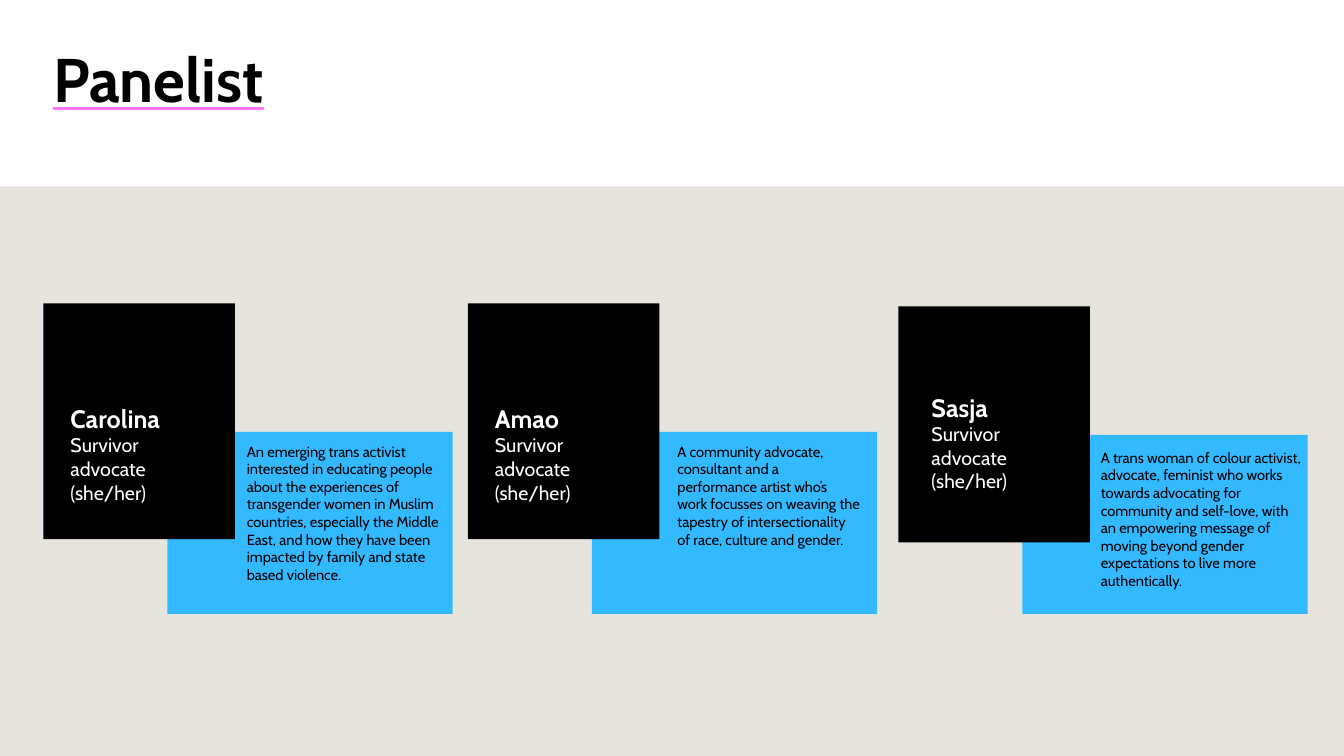
from dataclasses import dataclass

from lxml import etree
from pptx import Presentation
from pptx.dml.color import RGBColor
from pptx.enum.shapes import MSO_SHAPE
from pptx.enum.text import MSO_ANCHOR, PP_ALIGN
from pptx.oxml.ns import qn
from pptx.util import Inches, Pt

RECT = MSO_SHAPE.RECTANGLE
TOP = MSO_ANCHOR.TOP
LEFT = PP_ALIGN.LEFT


@dataclass(frozen=True)
class Theme:
    font: str = "Cabin"
    black: str = "000000"
    white: str = "FFFFFF"
    sand: str = "E6E4DC"
    blue: str = "33B9FF"
    pink: str = "FF75FF"
    title: float = 44
    name: float = 18
    role: float = 14
    bio: float = 10.5


def add_text(p, text, *, font, size, color, bold=False, underline=None):
    r = p.add_run()
    r.text = text
    r.font.name = font
    r.font.size = Pt(size)
    r.font.bold = bold
    r.font.color.rgb = RGBColor.from_string(color)
    if underline:
        r.font.underline = True
        line_fill = etree.Element(qn("a:uFill"))
        solid = etree.SubElement(line_fill, qn("a:solidFill"))
        etree.SubElement(solid, qn("a:srgbClr"), val=underline)
        r.font._element.find(qn("a:latin")).addprevious(line_fill)
    return r


class Deck:
    COLS, ROWS = 133.3, 75

    def __init__(self, theme):
        self.theme = theme
        self.prs = Presentation()
        self.prs.slide_width, self.prs.slide_height = Inches(13.33), Inches(7.5)
        self.s = self.prs.slides.add_slide(self.prs.slide_layouts[6])

    def place(self, col, row, cols, rows):
        cw = self.prs.slide_width / self.COLS
        rh = self.prs.slide_height / self.ROWS
        return round(col * cw), round(row * rh), round(cols * cw), round(rows * rh)

    def block(self, col, row, cols, rows, color):
        sp = self.s.shapes.add_shape(RECT, *self.place(col, row, cols, rows))
        sp.shadow.inherit = False
        sp.fill.solid()
        sp.fill.fore_color.rgb = RGBColor.from_string(color)
        sp.line.fill.background()
        return sp

    def text(self, col, row, cols, rows, lines, after=0, spacing=None):
        sp = self.s.shapes.add_textbox(*self.place(col, row, cols, rows))
        tf = sp.text_frame
        tf.word_wrap = True
        tf.vertical_anchor = TOP
        for i, (text, style) in enumerate(lines):
            p = tf.add_paragraph() if i else tf.paragraphs[0]
            p.alignment = LEFT
            p.space_after = Pt(after)
            p.line_spacing = spacing
            add_text(p, text, font=self.theme.font, **style)
        return sp

    def panelist(self, name, bio, card_at, name_at, bio_at, bio_size, after=6):
        t = self.theme
        col, row = card_at
        blue_top = row + 12.75
        self.block(col + 12.3, blue_top, 28.3, 60.9 - blue_top, t.blue)
        self.text(*bio_at, *bio_size, [(bio, dict(size=t.bio, color=t.black))], after)
        self.block(col, row, 19, 23.4, t.black)
        self.text(*name_at, 15.9, 11.1, [
            (name, dict(size=t.name, color=t.white, bold=True)),
            ("Survivor advocate (she/her)", dict(size=t.role, color=t.white)),
        ])


def main():
    theme = Theme()
    deck = Deck(theme)
    deck.block(0, 18.5, deck.COLS, 56.5, theme.sand)
    title = dict(size=theme.title, color=theme.black, bold=True, underline=theme.pink)
    deck.text(4.3, 4.4, 115, 9.7, [("Panelist", title)], spacing=0.9)
    deck.panelist(
        "Carolina",
        "An emerging trans activist interested in educating people about the "
        "experiences of transgender women in Muslim countries, especially the "
        "Middle East, and how they have been impacted by family and state "
        "based violence.",
        card_at=(4.3, 30.1), name_at=(6, 39.5),
        bio_at=(23.5, 43.4), bio_size=(21.5, 16.9))
    deck.panelist(
        "Amao",
        "A community advocate, consultant and a performance artist who’s work "
        "focusses on weaving the tapestry of intersectionality of race, culture "
        "and gender.",
        card_at=(46.4, 30.1), name_at=(48.1, 39.5),
        bio_at=(66.2, 43.4), bio_size=(20.1, 13.4))
    deck.panelist(
        "Sasja",
        "A trans woman of colour activist, advocate, feminist who works towards "
        "advocating for community and self-love, with an empowering message of "
        "moving beyond gender expectations to live more authentically.",
        card_at=(89.1, 30.4), name_at=(91.4, 38.4),
        bio_at=(108.2, 44), bio_size=(22.4, 16.9), after=0)
    deck.prs.save("out.pptx")


if __name__ == "__main__":
    main()
